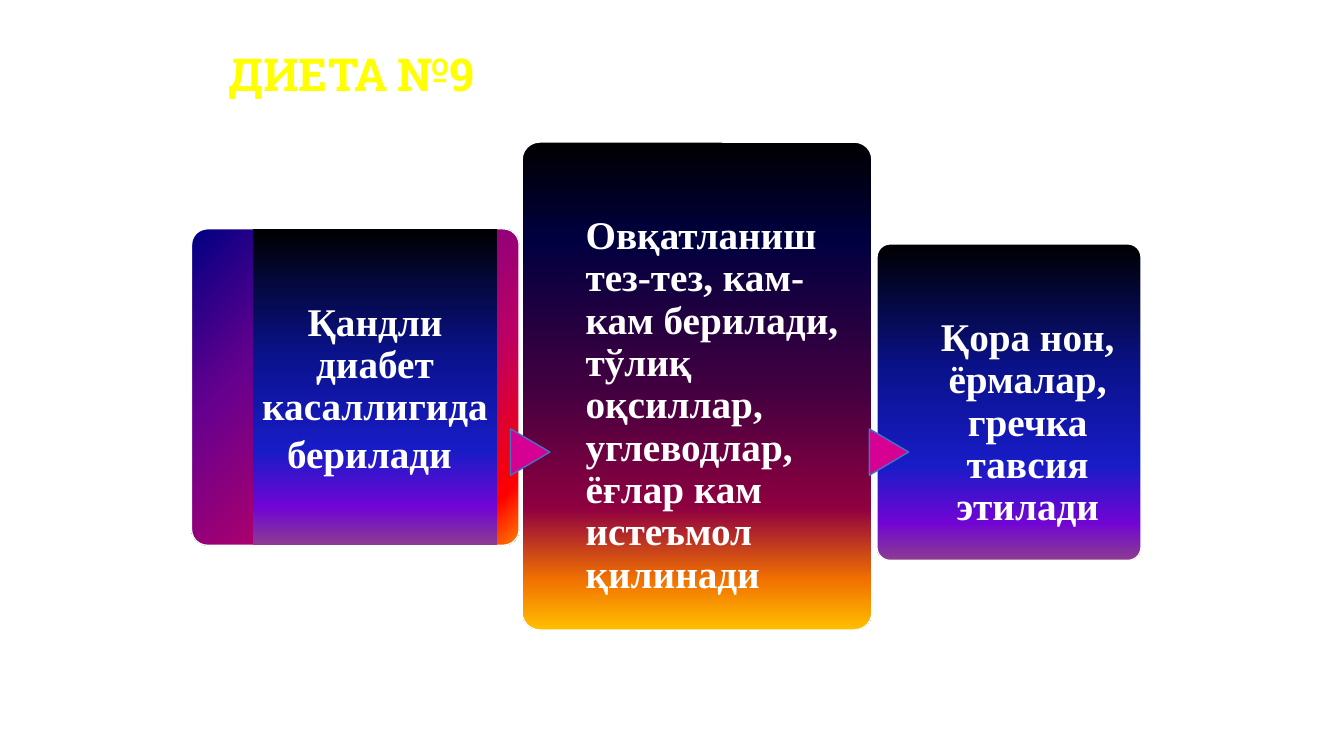
from lxml import etree
from pptx import Presentation
from pptx import util as u
from pptx.dml.color import RGBColor
from pptx.enum import shapes, text
from pptx.oxml.ns import qn

NIGHT = [(0, "000000"), (40, "0A128C"), (70, "181CC7"), (88, "7005D4"), (100, "8C3D91")]
FLAME = [(0, "000082"), (30, "66008F"), (65, "BA0066"), (90, "FF0000"), (100, "FF8200")]
DAWN = [(0, "000000"), (20, "000040"), (50, "400040"), (75, "8F0040"), (90, "F27300"), (100, "FFBF00")]
KIND = shapes.MSO_SHAPE
LEFT, MID = text.PP_ALIGN.LEFT, text.PP_ALIGN.CENTER


def tint(code):
    return RGBColor.from_string(code)


def write(para, words, size=28, face="Times New Roman", color="FFFFFF", align=LEFT):
    para.alignment = align
    para.line_spacing = 0.9
    run = para.add_run()
    run.text = words
    font = run.font
    font.size, font.name, font.bold = u.Pt(size), face, True
    font.color.rgb = tint(color)


class Deck:
    """Draws one slide on a grid of 160 columns by 90 rows."""

    def __init__(self):
        self.prs = Presentation()
        self.prs.slide_width, self.prs.slide_height = u.Inches(13.33), u.Inches(7.5)
        self.page = self.prs.slides.add_slide(self.prs.slide_layouts[5])

    def cells(self, *spans):
        wide, high = self.prs.slide_width / 160, self.prs.slide_height / 90
        return [int(n * unit) for n, unit in zip(spans, (wide, high, wide, high))]

    def title(self, words, *spot):
        head = self.page.shapes.title
        head.left, head.top, head.width, head.height = self.cells(*spot)
        frame = head.text_frame
        frame.vertical_anchor = text.MSO_ANCHOR.TOP
        frame.auto_size = text.MSO_AUTO_SIZE.NONE
        write(frame.paragraphs[0], words, size=32.4, face="Roboto Slab", color="FFFF00")

    def shape(self, kind, spot, line=None):
        item = self.page.shapes.add_shape(kind, *self.cells(*spot))
        item.shadow.inherit = False
        if line:
            item.line.color.rgb = tint(line)
            item.line.width = u.Pt(1)
        else:
            item.line.fill.background()
        return item

    def card(self, spot, stops, angle=270, kind=KIND.ROUNDED_RECTANGLE, line="FFFFFF"):
        item = self.shape(kind, spot, line)
        if kind == KIND.ROUNDED_RECTANGLE:
            item.adjustments[0] = 0.05
        item.fill.gradient()
        item.fill.gradient_angle = angle
        ramp = next(item._element.spPr.iter(qn("a:gsLst")))
        for old in list(ramp):
            ramp.remove(old)
        for part, code in stops:
            stop = etree.SubElement(ramp, qn("a:gs"), pos=str(part * 1000))
            etree.SubElement(stop, qn("a:srgbClr"), val=code)

    def arrow(self, col):
        item = self.shape(KIND.FLOWCHART_EXTRACT, (col, 51.48, 5.52, 4.68), "4472C4")
        item.fill.solid()
        item.fill.fore_color.rgb = tint("D60093")
        item.rotation = 90

    def label(self, words, spot, align=MID):
        frame = self.page.shapes.add_textbox(*self.cells(*spot)).text_frame
        frame.word_wrap = True
        frame.margin_left = frame.margin_right = frame.margin_bottom = 0
        frame.margin_top = u.Inches(0.73)
        write(frame.paragraphs[0], words, align=align)
        return frame.paragraphs[0]


def main():
    deck = Deck()
    deck.title("ДИЕТА №9", 26, 5.64, 108, 14)

    panel = (30.12, 27.24, 29.04, 37.68)
    deck.card((22.8, 27.24, 39, 37.68), FLAME, angle=315)
    deck.card(panel, NIGHT, kind=KIND.RECTANGLE, line=None)
    para = deck.label("Қандли диабет касаллигида берилади", panel)
    write(para, " ", size=32, align=MID)

    deck.card((62.16, 16.92, 41.64, 58.08), DAWN)
    deck.arrow(60.36)
    deck.label("Овқатланиш тез-тез, кам-кам берилади, тўлиқ оқсиллар, углеводлар, "
               "ёғлар кам истеъмол қилинади", (69.72, 16.92, 30.96, 58.08), align=LEFT)

    deck.card((104.4, 29.04, 31.44, 37.68), NIGHT)
    deck.arrow(103.08)
    deck.label("Қора нон, ёрмалар, гречка тавсия этилади", (110.64, 29.04, 23.4, 37.68))

    deck.prs.save("out.pptx")


if __name__ == "__main__":
    main()
